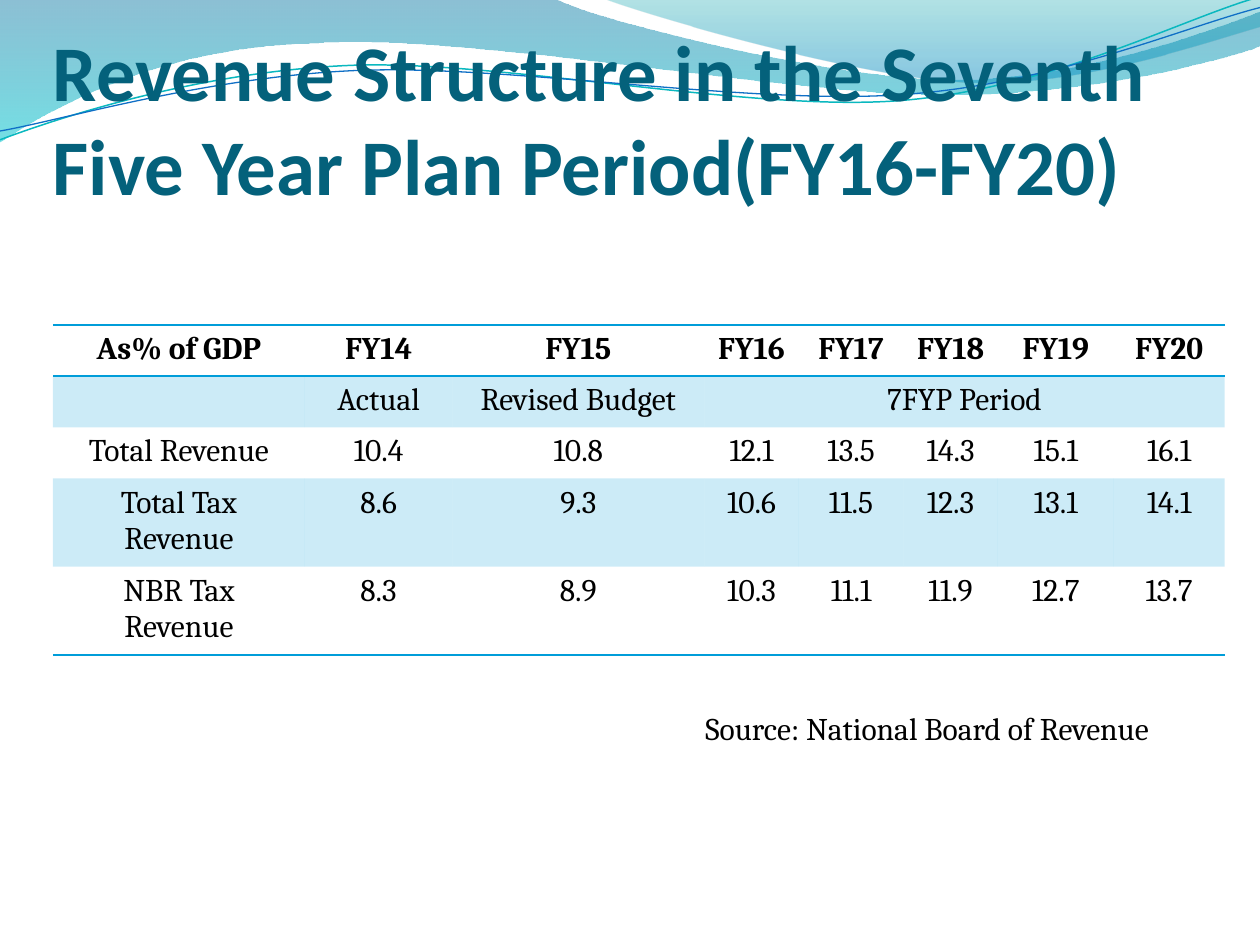
from lxml.etree import SubElement
from pptx import Presentation
from pptx.dml.color import RGBColor
from pptx.enum.text import MSO_ANCHOR, PP_ALIGN
from pptx.oxml.ns import qn
from pptx.util import Inches, Pt

BLACK = RGBColor(0x00, 0x00, 0x00)
TITLE_COLOR = RGBColor(0x04, 0x61, 0x7B)
TABLE_BLUE = RGBColor(0x00, 0x9D, 0xD9)
WAVE_BLUE = RGBColor(0x00, 0x74, 0xA1)
WAVE_CYAN = RGBColor(0x00, 0xC6, 0xCF)
CREST_TEAL = RGBColor(0x00, 0xA1, 0xA9)
CREST_BLUE = RGBColor(0x00, 0x8B, 0xBF)
LINE_TEAL = RGBColor(0x0A, 0xB8, 0xBF)
LINE_BLUE = RGBColor(0x0F, 0x6F, 0xC6)
NO_STYLE_TABLE = "{2D5ABB26-0587-4C30-8999-92F81FD0307C}"

# Each outline is a start point, then (x, y) for a line or six numbers for a curve.
WAVE = [(0, 0), (4.4, -0.01), (4.76, 0.17, 6.64, 0.63, 7.58, 0.63),
        (8.53, 0.63, 9.58, 0.26, 10, 0.09), (10.01, 0.36),
        (9.83, 0.44, 8.7, 0.76, 7.46, 0.75), (6.22, 0.75, 3.82, 0.28, 2.57, 0.34),
        (1.29, 0.36, 0.46, 0.83, -0.01, 1.13)]
CREST = [(4.79, -0.01), (5.09, 0.11, 6.82, 0.62, 7.69, 0.65),
         (8.56, 0.69, 9.61, 0.32, 10, 0.21), (10, 0)]
TEAL_CURVE = [(0, 1.11), (0.48, 0.93, 1.58, 0.57, 2.77, 0.52),
              (3.95, 0.47, 5.93, 0.89, 7.13, 0.8), (8.33, 0.71, 9.38, 0.15, 9.98, -0.02)]
BLUE_CURVE = [(0, 1.04), (0.47, 0.96, 1.64, 0.61, 2.83, 0.56),
              (4.03, 0.51, 5.97, 0.84, 7.17, 0.75), (8.36, 0.67, 9.41, 0.21, 10, 0.06)]

COLUMN_WIDTHS = [2, 1.17, 2, 0.75, 0.83, 0.75, 0.92, 0.88]
ROW_HEIGHT = Pt(29.2)
TABLE_ROWS = [
    ["As% of GDP", "FY14", "FY15", "FY16", "FY17", "FY18", "FY19", "FY20"],
    ["", "Actual", "Revised Budget", "7FYP Period", "", "", "", ""],
    ["Total Revenue", "10.4", "10.8", "12.1", "13.5", "14.3", "15.1", "16.1"],
    ["Total Tax Revenue", "8.6", "9.3", "10.6", "11.5", "12.3", "13.1", "14.1"],
    ["NBR Tax Revenue", "8.3", "8.9", "10.3", "11.1", "11.9", "12.7", "13.7"],
]


def set_alpha(element, percents):
    """Give the colours inside element, in order, these opacities."""
    for color, percent in zip(element.iter(qn("a:srgbClr")), percents):
        SubElement(color, qn("a:alpha"), val=str(percent * 1000))


def bend_segments(shape, outline):
    """Join the three line points of each curved segment into one Bézier curve."""
    line_points = iter(list(shape._element.iter(qn("a:lnTo"))))
    for segment in outline[1:]:
        first = next(line_points)
        if len(segment) == 6:
            first.tag = qn("a:cubicBezTo")
            for _ in range(2):
                extra = next(line_points)
                first.append(extra[0])
                extra.getparent().remove(extra)


def add_outline(slide, outline, close):
    points = [(Inches(segment[i]), Inches(segment[i + 1]))
              for segment in outline for i in range(0, len(segment), 2)]
    builder = slide.shapes.build_freeform(*points[0])
    builder.add_line_segments(points[1:], close=close)
    shape = builder.convert_to_shape()
    bend_segments(shape, outline)
    shape.shadow.inherit = False
    return shape


def add_gradient_area(slide, outline, stops):
    """Add a closed area shaded downwards; stops are (position, colour, opacity)."""
    shape = add_outline(slide, outline, close=True)
    shape.line.fill.background()
    shape.fill.gradient()
    shape.fill.gradient_angle = 270
    for stop, (position, color, _) in zip(shape.fill.gradient_stops, stops):
        stop.position = position
        stop.color.rgb = color
    set_alpha(shape._element.spPr, [opacity for _, _, opacity in stops])


def add_curve(slide, outline, color, width):
    shape = add_outline(slide, outline, close=False)
    shape.fill.background()
    shape.line.color.rgb = color
    shape.line.width = Pt(width)


def set_font(paragraph, name, size, color, bold=False):
    font = paragraph.font
    font.name, font.size, font.bold = name, Pt(size), bold
    font.color.rgb = color


def add_text(slide, text, left, top, width, height, wrap):
    box = slide.shapes.add_textbox(Inches(left), Inches(top), Inches(width), Inches(height))
    frame = box.text_frame
    frame.word_wrap = wrap
    frame.text = text
    return frame


def add_border(cell, side):
    line = SubElement(cell._tc.get_or_add_tcPr(), qn(f"a:{side}"), w=str(Pt(1)))
    fill = SubElement(line, qn("a:solidFill"))
    SubElement(fill, qn("a:srgbClr"), val=str(TABLE_BLUE))


def format_cell(cell, row_index):
    header, last = row_index == 0, row_index == len(TABLE_ROWS) - 1
    if header:
        add_border(cell, "lnT")
    if header or last:
        add_border(cell, "lnB")
    if row_index % 2:
        cell.fill.solid()
        cell.fill.fore_color.rgb = TABLE_BLUE
        set_alpha(cell._tc.tcPr, [20])
    else:
        cell.fill.background()
    paragraph = cell.text_frame.paragraphs[0]
    paragraph.alignment = PP_ALIGN.CENTER
    set_font(paragraph, "Cambria", 18, BLACK, bold=header)


def add_revenue_table(slide):
    frame = slide.shapes.add_table(
        len(TABLE_ROWS), len(COLUMN_WIDTHS), Inches(0.42), Inches(2.58),
        Inches(sum(COLUMN_WIDTHS)), ROW_HEIGHT * len(TABLE_ROWS))
    table = frame.table
    table._tbl.tblPr.find(qn("a:tableStyleId")).text = NO_STYLE_TABLE
    for column, width in zip(table.columns, COLUMN_WIDTHS):
        column.width = Inches(width)
    for row in table.rows:
        row.height = ROW_HEIGHT
    for row_index, values in enumerate(TABLE_ROWS):
        for column_index, value in enumerate(values):
            cell = table.cell(row_index, column_index)
            cell.text = value
            format_cell(cell, row_index)
    table.cell(1, 3).merge(table.cell(1, 7))


def main():
    presentation = Presentation()
    presentation.slide_width, presentation.slide_height = Inches(10), Inches(7.5)
    slide = presentation.slides.add_slide(presentation.slide_layouts[6])

    add_gradient_area(slide, WAVE, [(0, WAVE_BLUE, 45), (1, WAVE_CYAN, 55)])
    add_gradient_area(slide, CREST, [(0, CREST_TEAL, 30), (0.8, CREST_BLUE, 45)])
    add_curve(slide, TEAL_CURVE, LINE_TEAL, 0.85)
    add_curve(slide, BLUE_CURVE, LINE_BLUE, 0.75)

    title = add_text(slide, "Revenue Structure in the Seventh Five Year Plan Period(FY16-FY20)",
                     0.42, 0.33, 9, 1.35, wrap=True)
    title.vertical_anchor = MSO_ANCHOR.BOTTOM
    title.margin_left = title.margin_right = title.margin_bottom = 0
    set_font(title.paragraphs[0], "Calibri", 45, TITLE_COLOR, bold=True)

    add_revenue_table(slide)

    source = add_text(slide, "Source: National Board of Revenue", 5.5, 5.58, 3.98, 0.4, wrap=False)
    set_font(source.paragraphs[0], "Cambria", 18, BLACK)

    presentation.save("out.pptx")


if __name__ == "__main__":
    main()
